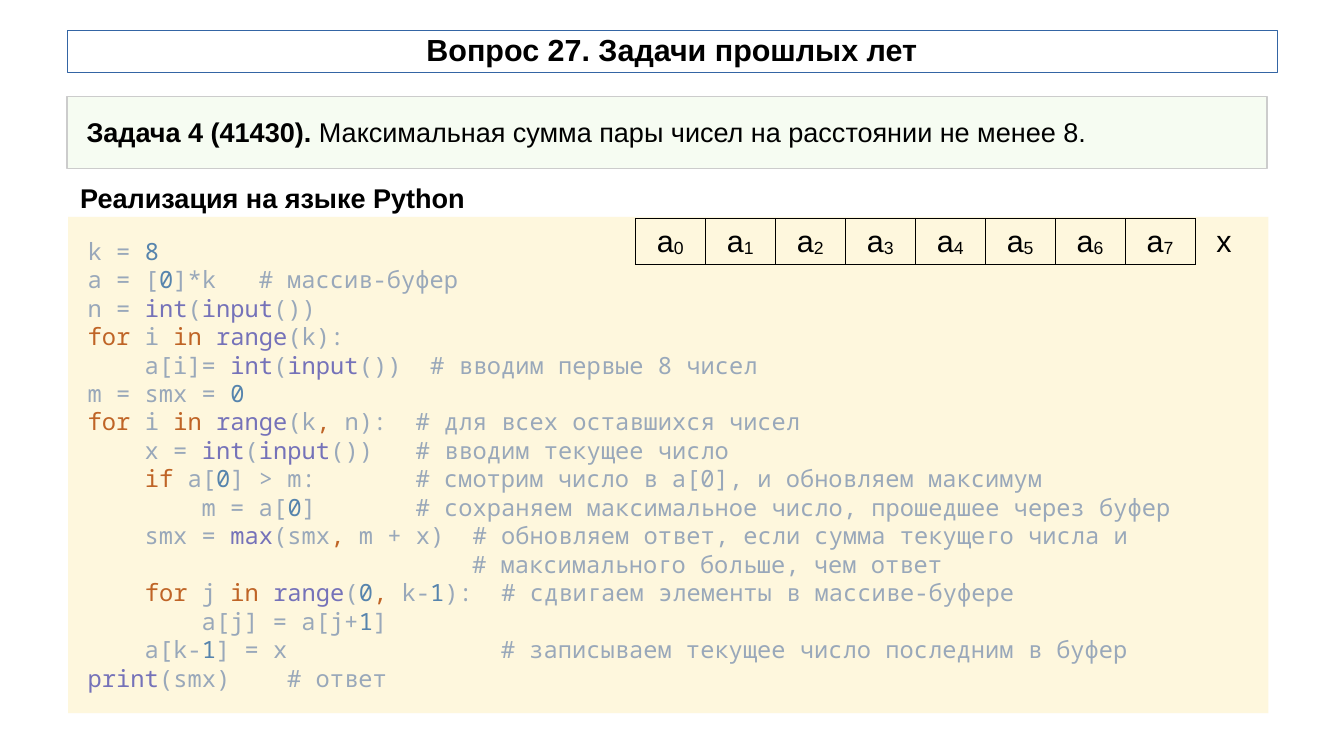
"""Build the slide with the Python solution of task 4 from question 27."""
from itertools import groupby

from lxml import etree
from pptx import Presentation
from pptx import util as u
from pptx.dml.color import RGBColor
from pptx.enum import shapes, text
from pptx.oxml import ns

TITLE = "Вопрос 27. Задачи прошлых лет"
TASK = ("Задача 4 (41430).", " Максимальная сумма пары чисел на расстоянии не менее 8.")
HEADING = "Реализация на языке Python"
CODE = [
    "k = 8",
    "a = [0]*k   # массив-буфер",
    "n = int(input())",
    "for i in range(k):",
    "    a[i]= int(input())  # вводим первые 8 чисел",
    "m = smx = 0",
    "for i in range(k, n):  # для всех оставшихся чисел",
    "    x = int(input())   # вводим текущее число",
    "    if a[0] > m:       # смотрим число в a[0], и обновляем максимум",
    "        m = a[0]       # сохраняем максимальное число, прошедшее через буфер",
    "    smx = max(smx, m + x)  # обновляем ответ, если сумма текущего числа и",
    "                           # максимального больше, чем ответ",
    "    for j in range(0, k-1):  # сдвигаем элементы в массиве-буфере",
    "        a[j] = a[j+1]",
    "    a[k-1] = x               # записываем текущее число последним в буфер",
    "print(smx)    # ответ",
]
BUFFER = [("a", str(index)) for index in range(8)]
CURRENT = [("x", "")]

BLACK, PLAIN, KEYWORD, BUILTIN, NUMBER = "000000", "99A8BA", "BF6426", "7572B9", "5684AD"
WORD_COLORS = {
    **dict.fromkeys(["for", "in", "if", ","], KEYWORD),
    **dict.fromkeys(["int", "input", "range", "max", "print"], BUILTIN),
}
CELL_WIDTH, ROW_HEIGHT, TABLE_TOP = 0.574, 0.38, 1.79


def color(value):
    return RGBColor.from_string(value)


def style(font, size, name="Arial", bold=False, tint=BLACK):
    font.size, font.name, font.bold = u.Pt(size), name, bold
    font.color.rgb = color(tint)


def set_insets(target, horizontal, vertical):
    target.margin_left = target.margin_right = u.Inches(horizontal)
    target.margin_top = target.margin_bottom = u.Inches(vertical)


def add_box(page, place, insets, fill=None, line=None, width=0.0):
    box = page.shapes.add_shape(shapes.MSO_SHAPE.RECTANGLE, *map(u.Inches, place))
    box.shadow.inherit = False
    if fill:
        box.fill.solid()
        box.fill.fore_color.rgb = color(fill)
    else:
        box.fill.background()
    if line:
        box.line.color.rgb = color(line)
        box.line.width = u.Pt(width)
    else:
        box.line.fill.background()
    frame = box.text_frame
    frame.word_wrap = True
    frame.vertical_anchor = text.MSO_ANCHOR.TOP
    set_insets(frame, *insets)
    frame.paragraphs[0].alignment = text.PP_ALIGN.LEFT
    return frame


def color_spans(line):
    """Split a code line into (colour, text) spans."""
    code, mark, comment = line.partition("#")
    kinds = groupby(code, lambda c: "word" if c.isalpha() else "digit" if c.isdigit() else c)
    for kind, letters in kinds:
        token = "".join(letters)
        yield NUMBER if kind == "digit" else WORD_COLORS.get(token, PLAIN), token
    yield PLAIN, mark + comment


def add_code(frame):
    for number, line in enumerate(CODE):
        para = frame.add_paragraph() if number else frame.paragraphs[0]
        para.alignment = text.PP_ALIGN.LEFT
        style(para.font, 14, "Noto Sans Mono", tint=PLAIN)
        for tint, spans in groupby(color_spans(line), lambda pair: pair[0]):
            span = para.add_run()
            span.text = "".join(token for _, token in spans)
            style(span.font, 14, "Noto Sans Mono", tint=tint)


def set_borders(cell, width):
    props = cell._tc.get_or_add_tcPr()
    for side in ("a:lnL", "a:lnR", "a:lnT", "a:lnB"):
        line = etree.SubElement(props, ns.qn(side), w=str(u.Pt(width)))
        if width:
            fill = etree.SubElement(line, ns.qn("a:solidFill"))
            etree.SubElement(fill, ns.qn("a:srgbClr"), val=BLACK)
        else:
            etree.SubElement(line, ns.qn("a:noFill"))


def add_cells(page, left, entries, border):
    place = (left, TABLE_TOP, CELL_WIDTH * len(entries), ROW_HEIGHT)
    table = page.shapes.add_table(1, len(entries), *map(u.Inches, place)).table
    table.first_row = table.horz_banding = False
    for cell, (letter, index) in zip(table.rows[0].cells, entries):
        set_borders(cell, border)
        cell.fill.background()
        set_insets(cell, 0.04, 0.05)
        para = cell.text_frame.paragraphs[0]
        para.alignment = text.PP_ALIGN.CENTER
        style(para.font, 18)
        para.add_run().text = letter
        if index:
            span = para.add_run()
            span.text = index
            span.font._element.set("baseline", "-8000")


def main():
    deck = Presentation()
    deck.slide_width, deck.slide_height = u.Inches(11.02), u.Inches(6.2)
    page = deck.slides.add_slide(deck.slide_layouts[6])

    add_code(add_box(page, (0.56, 1.78, 9.84, 4.07), (0.16, 0.16), "FEF7DD"))

    heading = add_box(page, (0.56, 1.44, 3.93, 0.35), (0.1, 0.05)).paragraphs[0]
    heading.text = HEADING
    style(heading.font, 16, bold=True)

    task = add_box(page, (0.55, 0.79, 9.84, 0.59), (0.16, 0.16), "F6FCF2", "CCCCCC").paragraphs[0]
    for part, bold in zip(TASK, (True, False)):
        span = task.add_run()
        span.text = part
        style(span.font, 16, bold=bold)

    frame = add_box(page, (0.55, 0.25, 9.92, 0.34), (0.04, 0), line="3465A4", width=0.28)
    frame.vertical_anchor = text.MSO_ANCHOR.MIDDLE
    title = frame.paragraphs[0]
    title.text = TITLE
    title.alignment = text.PP_ALIGN.CENTER
    title.line_spacing = 0.9
    style(title.font, 18, bold=True)

    add_cells(page, 5.21, BUFFER, 0.57)
    add_cells(page, 9.75, CURRENT, 0)
    deck.save("out.pptx")


if __name__ == "__main__":
    main()
